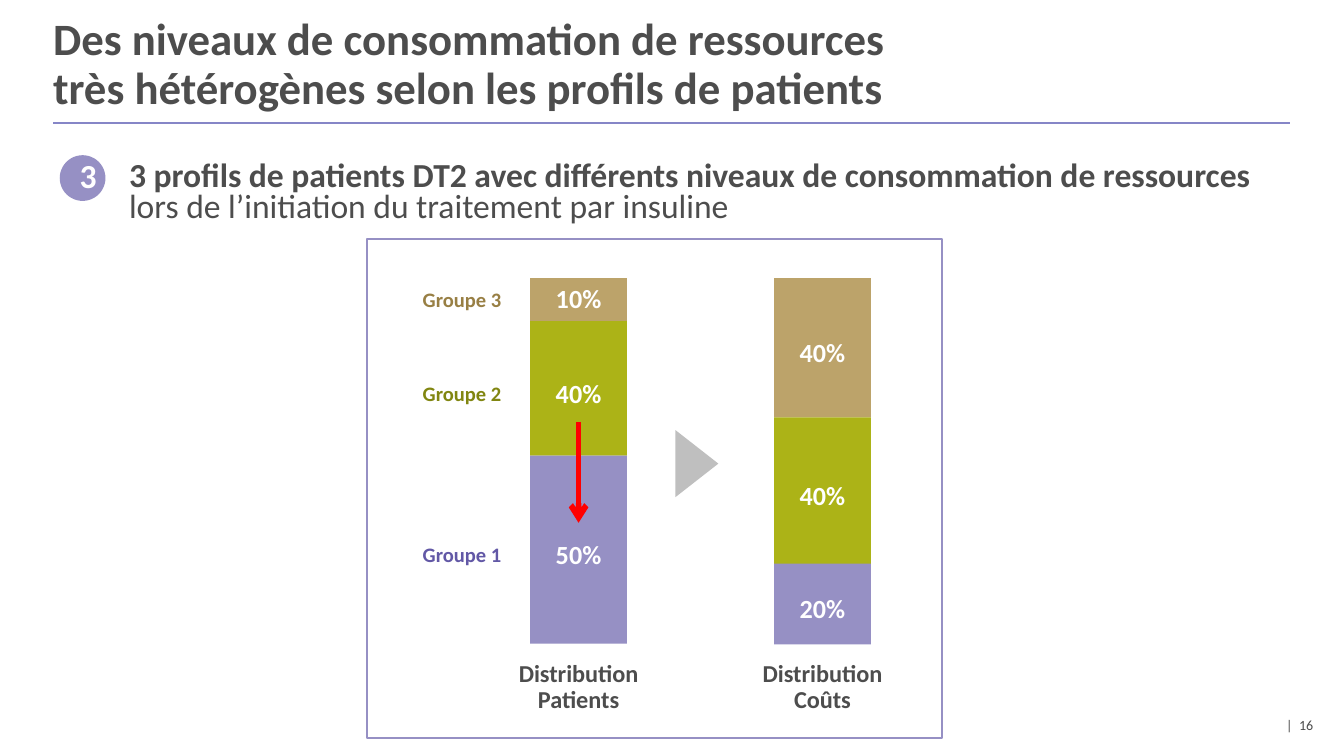
from pptx import Presentation
from pptx.dml.color import RGBColor
from pptx.enum.shapes import MSO_CONNECTOR, MSO_SHAPE
from pptx.enum.text import MSO_ANCHOR, MSO_AUTO_SIZE, PP_ALIGN
from pptx.oxml.ns import qn
from pptx.util import Inches, Pt
from lxml.etree import SubElement

COLORS = {
    "text": "4D4D4D", "white": "FFFFFF", "rule": "8686C7",
    "purple": "9690C4", "green": "ACB317", "tan": "BCA36A",
    "dark_purple": "6258A6", "dark_green": "818611", "dark_tan": "987F44",
    "grey": "BFBFBF", "red": "FF0000",
}
CELL = 0.1
COLS = 100
ROWS = COLS * 9 / 16
BAR_TOP, BAR_WIDTH = 20.7, 7.2
LABEL_HEIGHT = 3.9
GROUPS = [("Groupe 3", "tan", 20.9), ("Groupe 2", "green", 27.85), ("Groupe 1", "purple", 39.85)]
STACKS = [
    ("Distribution\nPatients", 39.45, [("10%", 3.2, 22.45), ("40%", 10, 29.55), ("50%", 14, 41.55)]),
    ("Distribution\nCoûts", 57.6, [("40%", 10.35, 26.5), ("40%", 10.9, 37.15), ("20%", 6, 45.55)]),
]


def grid(*cells):
    return [Inches(c * CELL) for c in cells]


def rgb(name):
    return RGBColor.from_string(COLORS[name])


def write(tf, text, size, color="text", bold=True, align=PP_ALIGN.LEFT, spacing=None):
    p = tf.paragraphs[0]
    p.alignment = align
    if spacing:
        p.line_spacing = Pt(spacing)
    p.font.name, p.font.size, p.font.bold = "Calibri", Pt(size), bold
    p.font.color.rgb = rgb(color)
    for i, line in enumerate(text.split("\n")):
        if i:
            p.add_line_break()
        p.add_run().text = line
    return p


def set_insets(tf, left=0, top=0, right=0, bottom=0):
    tf.margin_left, tf.margin_top, tf.margin_right, tf.margin_bottom = grid(left, top, right, bottom)


def add_text(slide, box, text, size, inset=True, **style):
    tf = slide.shapes.add_textbox(*grid(*box)).text_frame
    tf.word_wrap = True
    if not inset:
        set_insets(tf)
    return write(tf, text, size, **style)


def add_shape(slide, kind, box, fill, line=None):
    sp = slide.shapes.add_shape(kind, *grid(*box))
    sp.shadow.inherit = False
    sp.fill.solid()
    sp.fill.fore_color.rgb = rgb(fill)
    if line:
        sp.line.color.rgb = rgb(line)
        sp.line.width = Pt(1)
    else:
        sp.line.fill.background()
    return sp


def add_line(slide, ends, color, width, arrow=False):
    cx = slide.shapes.add_connector(MSO_CONNECTOR.STRAIGHT, *grid(*ends))
    cx.line.color.rgb = rgb(color)
    cx.line.width = Pt(width)
    if arrow:
        SubElement(cx.line._get_or_add_ln(), qn("a:tailEnd"), type="arrow")
    SubElement(cx._element.spPr, qn("a:effectLst"))


def add_title(slide, text):
    title = slide.shapes.title
    title.left, title.top, title.width, title.height = grid(3.95, 1.35, 93.6, 6.9)
    tf = title.text_frame
    tf.auto_size = MSO_AUTO_SIZE.NONE
    tf.vertical_anchor = MSO_ANCHOR.MIDDLE
    set_insets(tf)
    write(tf, text, 24, spacing=26)


def add_statement(slide, number, strong, rest):
    p = add_text(slide, (9.6, 12.2, 83.9, 4.7), strong, 18, inset=False, bold=None, spacing=16.5)
    p.runs[0].font.bold = True
    r = p.add_run()
    r.text = rest
    r.font.bold = False
    badge = add_shape(slide, MSO_SHAPE.OVAL, (4.45, 11.55, 3.4, 3.4), "purple")
    tf = badge.text_frame
    tf.vertical_anchor = MSO_ANCHOR.MIDDLE
    set_insets(tf, 1, 0.7, 1, 0.5)
    write(tf, number, 18, "white", align=PP_ALIGN.CENTER, spacing=16.5)


def add_stack(slide, caption, left, parts):
    center = left + BAR_WIDTH / 2
    add_text(slide, (center - 8, 48.7, 16, 5.8), caption, 13,
             align=PP_ALIGN.CENTER, spacing=14)
    top = BAR_TOP
    for (_, color, _), (value, height, middle) in zip(GROUPS, parts):
        add_shape(slide, MSO_SHAPE.RECTANGLE, (left, top, BAR_WIDTH, height), color)
        add_text(slide, (center - 3.2, middle - LABEL_HEIGHT / 2, 6.4, LABEL_HEIGHT),
                 value, 14, color="white", align=PP_ALIGN.CENTER)
        top += height


def add_group_names(slide):
    for name, color, top in GROUPS:
        add_text(slide, (28.9, top, 9.4, 3.4), name, 11,
                 color="dark_" + color, align=PP_ALIGN.RIGHT)


def main():
    prs = Presentation()
    prs.slide_width, prs.slide_height = grid(COLS, ROWS)
    slide = prs.slides.add_slide(prs.slide_layouts[5])

    add_line(slide, (3.95, 9.15, 96, 9.15), "rule", 1)
    add_title(slide, "Des niveaux de consommation de ressources\n"
                     "très hétérogènes selon les profils de patients")
    add_text(slide, (95.7, 53.3, 5.3, 1.9), "|  16", 7.5, inset=False, bold=False)
    add_statement(slide, "3",
                  "3 profils de patients DT2 avec différents niveaux de consommation de ressources ",
                  "lors de l’initiation du traitement par insuline")

    add_shape(slide, MSO_SHAPE.RECTANGLE, (27.3, 17.8, 42.8, 37.1), "white", "purple")
    for stack in STACKS:
        add_stack(slide, *stack)
    add_group_names(slide)
    pointer = add_shape(slide, MSO_SHAPE.ISOSCELES_TRIANGLE, (49.35, 32.9, 5, 3.2), "grey")
    pointer.rotation = 90
    add_line(slide, (43.05, 31.4, 43.05, 38.9), "red", 3, arrow=True)

    prs.save("out.pptx")


if __name__ == "__main__":
    main()
